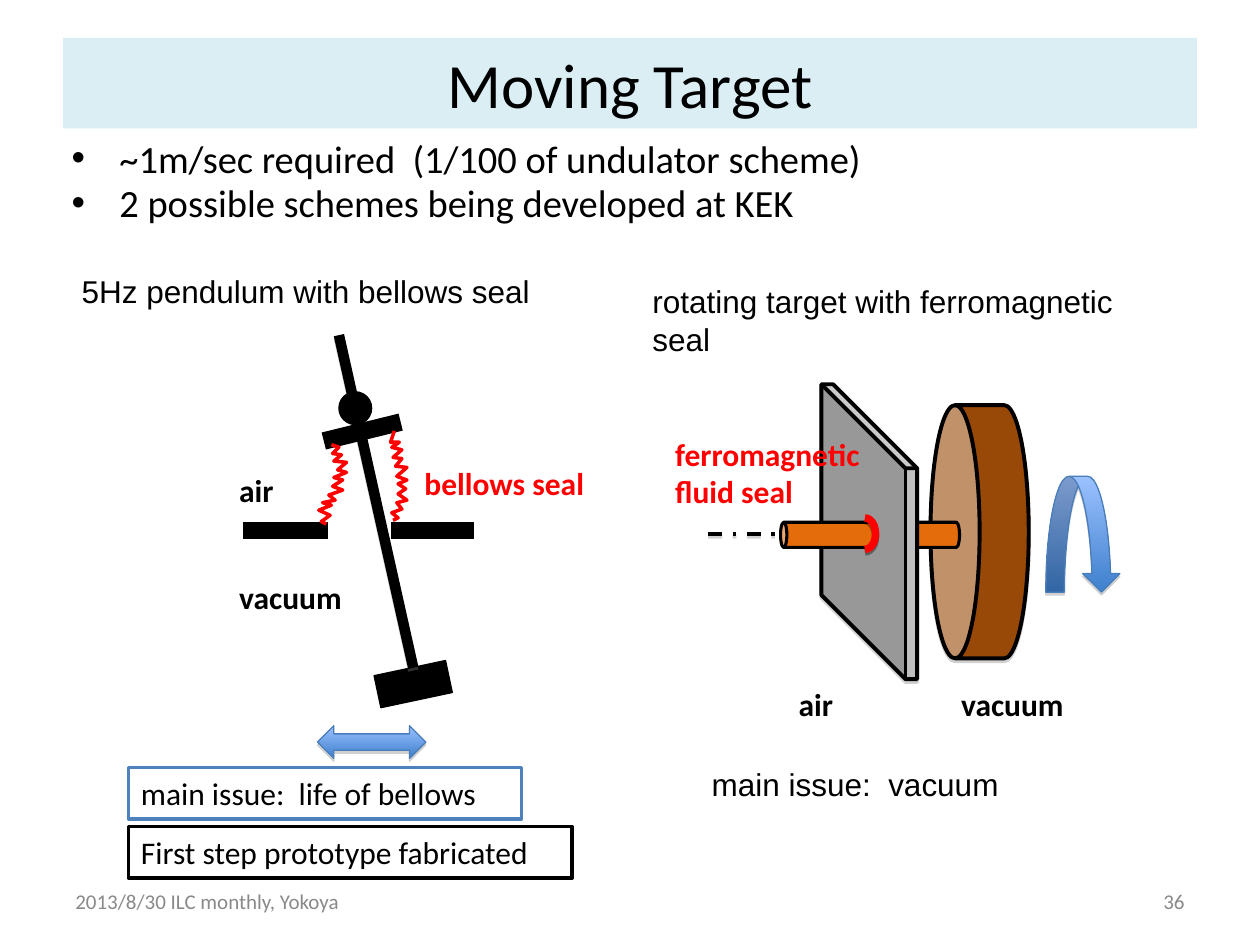
from dataclasses import dataclass

from lxml import etree
from pptx import Presentation
from pptx.dml.color import RGBColor
from pptx.enum.dml import MSO_LINE
from pptx.enum.shapes import MSO_CONNECTOR, MSO_SHAPE
from pptx.enum.text import MSO_ANCHOR, PP_ALIGN
from pptx.oxml.ns import qn
from pptx.util import Emu, Inches, Pt

RECT, DISK, CAN, CUBE = MSO_SHAPE.RECTANGLE, MSO_SHAPE.OVAL, MSO_SHAPE.CAN, MSO_SHAPE.CUBE
SWAY, TURN, ARC = MSO_SHAPE.LEFT_RIGHT_ARROW, MSO_SHAPE.CURVED_DOWN_ARROW, MSO_SHAPE.ARC
STRAIGHT, DASHED = MSO_CONNECTOR.STRAIGHT, MSO_LINE.DASH_DOT
TOP, MIDDLE = MSO_ANCHOR.TOP, MSO_ANCHOR.MIDDLE
LEFT, CENTER, RIGHT = PP_ALIGN.LEFT, PP_ALIGN.CENTER, PP_ALIGN.RIGHT

WIDE, TALL = Inches(10), Inches(7.5)
COLS, ROWS = 100, 75
BLACK, WHITE, RED, GRAY, BLUE = "000000", "FFFFFF", "FF0000", "898989", "4F81BD"
ORANGE, BROWN, STEEL, EDGE = "E46C0A", "984807", "BFBFBF", "4A7EBB"
SKY = ("9BC1FF", "3F80CD")

Point = tuple[float, float]
Box = tuple[float, float, float, float]


@dataclass
class Part:
    kind: MSO_SHAPE
    box: Box
    fill: str | tuple[str, str] | None
    line: str = BLACK
    width: float = 0.75
    turn: float = 0
    adjust: tuple[float, ...] = ()
    flip: bool = False
    shade: str | None = None


@dataclass
class Rod:
    start: Point
    end: Point
    width: float
    dash: MSO_LINE | None = None
    shade: str | None = None


deck = Presentation()
deck.slide_width, deck.slide_height = WIDE, TALL
slide = deck.slides.add_slide(deck.slide_layouts[6])
shapes = slide.shapes


def place(*spots: float) -> list[Emu]:
    return [Emu(round(s * (TALL / ROWS if i % 2 else WIDE / COLS))) for i, s in enumerate(spots)]


def hue(code: str) -> RGBColor:
    return RGBColor.from_string(code)


def cast(item, shade: str | None) -> None:
    props = item._element.spPr
    effects = props.find(qn("a:effectLst"))
    if effects is None:
        effects = etree.SubElement(props, qn("a:effectLst"))
    if shade:
        outer = etree.SubElement(effects, qn("a:outerShdw"), dist="20320", dir="5400000", rotWithShape="0")
        tint = etree.SubElement(outer, qn("a:srgbClr"), val=shade)
        etree.SubElement(tint, qn("a:alpha"), val="36000")


def stroke(item, color: str, width: float) -> None:
    item.line.color.rgb = hue(color)
    item.line.width = Pt(width)


def draw(part: Part):
    item = shapes.add_shape(part.kind, *place(*part.box))
    item.shadow.inherit = False
    item.rotation = part.turn
    for i, value in enumerate(part.adjust):
        item.adjustments[i] = value
    if part.fill is None:
        item.fill.background()
    elif isinstance(part.fill, tuple):
        item.fill.gradient()
        item.fill.gradient_angle = 270
        for stop, color in zip(item.fill.gradient_stops, part.fill):
            stop.color.rgb = hue(color)
    else:
        item.fill.solid()
        item.fill.fore_color.rgb = hue(part.fill)
    stroke(item, part.line, part.width)
    if part.flip:
        item._element.spPr.xfrm.set("flipH", "1")
    cast(item, part.shade)
    return item


def link(rod: Rod):
    item = shapes.add_connector(STRAIGHT, *place(*rod.start, *rod.end))
    stroke(item, BLACK, rod.width)
    if rod.dash:
        item.line.dash_style = rod.dash
    cast(item, rod.shade)
    return item


def zigzag(points: list[Point]) -> None:
    first, *rest = [tuple(place(*p)) for p in points]
    pen = shapes.build_freeform(*first)
    pen.add_line_segments(rest, close=False)
    item = pen.convert_to_shape()
    item.shadow.inherit = False
    item.fill.background()
    stroke(item, RED, 2)


def write(text: str, box: Box, *, size: float = 18, font: str = "Calibri", color: str = BLACK,
          bold: bool = False, align: PP_ALIGN = LEFT, anchor: MSO_ANCHOR = TOP, wrap: bool = True,
          fill: str | None = None, line: str | None = None, bullet: bool = False) -> None:
    item = shapes.add_textbox(*place(*box))
    if fill:
        item.fill.solid()
        item.fill.fore_color.rgb = hue(fill)
    if line:
        stroke(item, line, 2)
    frame = item.text_frame
    frame.word_wrap, frame.vertical_anchor = wrap, anchor
    frame.text = text
    for para in frame.paragraphs:
        para.alignment = align
        style = para.runs[0].font
        style.name, style.size, style.bold = font, Pt(size), bold
        style.color.rgb = hue(color)
        if bullet:
            para.line_spacing, para.space_before = 0.8, Pt(size * 0.2)
            props = para._p.get_or_add_pPr()
            props.set("marL", str(Inches(0.38)))
            props.set("indent", str(-Inches(0.38)))
            etree.SubElement(props, qn("a:buFont"), typeface="Arial")
            etree.SubElement(props, qn("a:buChar"), char="•")


write("Moving Target", (5, 3, 90, 7.2), size=36, align=CENTER, anchor=MIDDLE, fill="DBEEF4")
write("~1m/sec required  (1/100 of undulator scheme)\n2 possible schemes being developed at KEK",
      (4.7, 10.9, 90, 7.8), size=22, bullet=True)
foot = dict(size=12, color=GRAY, anchor=MIDDLE)
write("2013/8/30 ILC monthly, Yokoya", (5, 69.5, 23.3, 4), **foot)
write("36", (71.7, 69.5, 23.3, 4), align=RIGHT, **foot)

bob = draw(Part(RECT, (29.9, 53, 5.8, 2.6), BLACK, turn=348))
arm = link(Rod((26.9, 26.6), (32.8, 53), 6, shade="808080"))
arm.end_connect(bob, 0)
draw(Part(DISK, (26.9, 31.1, 2.6, 2.6), BLACK))
draw(Part(SWAY, (25.2, 57.6, 8.6, 2.6), SKY, EDGE, shade="808080"))
for start, end in [((19.3, 42.1), (26, 42.1)), ((31, 42.1), (37.6, 42.1)), ((25.7, 35), (31.8, 33.5))]:
    link(Rod(start, end, 10))
zigzag([(26.3, 35.3), (26.9, 35.5), (26.4, 36), (27.1, 36.1), (26.5, 36.6), (27.5, 36.7), (26.8, 37.3),
        (27.5, 37.5), (26.5, 37.9), (27.2, 38.1), (26.4, 38.6), (27.2, 38.9), (26.1, 39.3), (26.6, 39.7),
        (25.6, 39.9), (26.3, 40.1), (25.3, 40.5), (26.2, 40.9), (25.5, 41.4), (25.9, 41.6)])
zigzag([(31.3, 34.2), (31, 35.1), (31.7, 35.1), (31.1, 35.5), (31.9, 35.7), (31.2, 36.3), (31.9, 36.4),
        (31.4, 37), (32.3, 37.1), (31.5, 37.8), (32.3, 38.1), (31.6, 38.4), (32.2, 38.8), (31.6, 39.2),
        (32.3, 39.7), (31.5, 39.9), (31.9, 40.4), (31.1, 40.7), (31.6, 41.1), (31.2, 41.3)])

draw(Part(CAN, (67.7, 38.3, 20.1, 7.8), BROWN, width=2.25, turn=270, adjust=(0.5,), shade="808080"))
link(Rod((56.2, 42.4), (75.3, 42.4), 2, DASHED, "808080"))
for part in [
    Part(CAN, (69.7, 37, 2, 10.9), ORANGE, width=1.75, turn=270),
    Part(CUBE, (65.2, 30.5, 7.6, 23.4), STEEL, width=2.25, adjust=(0.878,), flip=True, shade="808080"),
    Part(CAN, (64.7, 38.7, 2, 7.5), ORANGE, width=1.75, turn=270),
    Part(TURN, (83, 37.8, 5.9, 9.2), SKY, EDGE, adjust=(0.25, 0.5, 0.25), shade="808080"),
    Part(ARC, (67.8, 41.1, 1.7, 2.5), None, RED, 4.25, adjust=(162, 54), shade=BLACK),
]:
    draw(part)

for text, box in [("vacuum", (18, 45.4, 10.6, 4.1)), ("air", (18, 36.9, 10.6, 4.1)),
                  ("air", (62.4, 53.9, 13.7, 4)), ("vacuum", (75.3, 53.9, 13.7, 4))]:
    write(text, box, bold=True)
for text, box in [("bellows seal", (32.7, 36.3, 14.8, 4)),
                  ("ferromagnetic\nfluid seal", (52.6, 34, 16.8, 7.1))]:
    write(text, box, bold=True, color=RED, wrap=False)
for text, box in [("5Hz pendulum with bellows seal", (5.5, 21.1, 41.4, 4.1)),
                  ("rotating target with ferromagnetic seal", (50.8, 21.9, 41.4, 7.1)),
                  ("main issue:  vacuum", (55.5, 60.2, 33.6, 4.1))]:
    write(text, box, font="Arial")
write("main issue:  life of bellows", (10.2, 60.9, 31.2, 4.1), fill=WHITE, line=BLUE)
write("First step prototype fabricated", (10.2, 65.6, 35.2, 4.1), fill=WHITE, line=BLACK)

deck.save("out.pptx")
